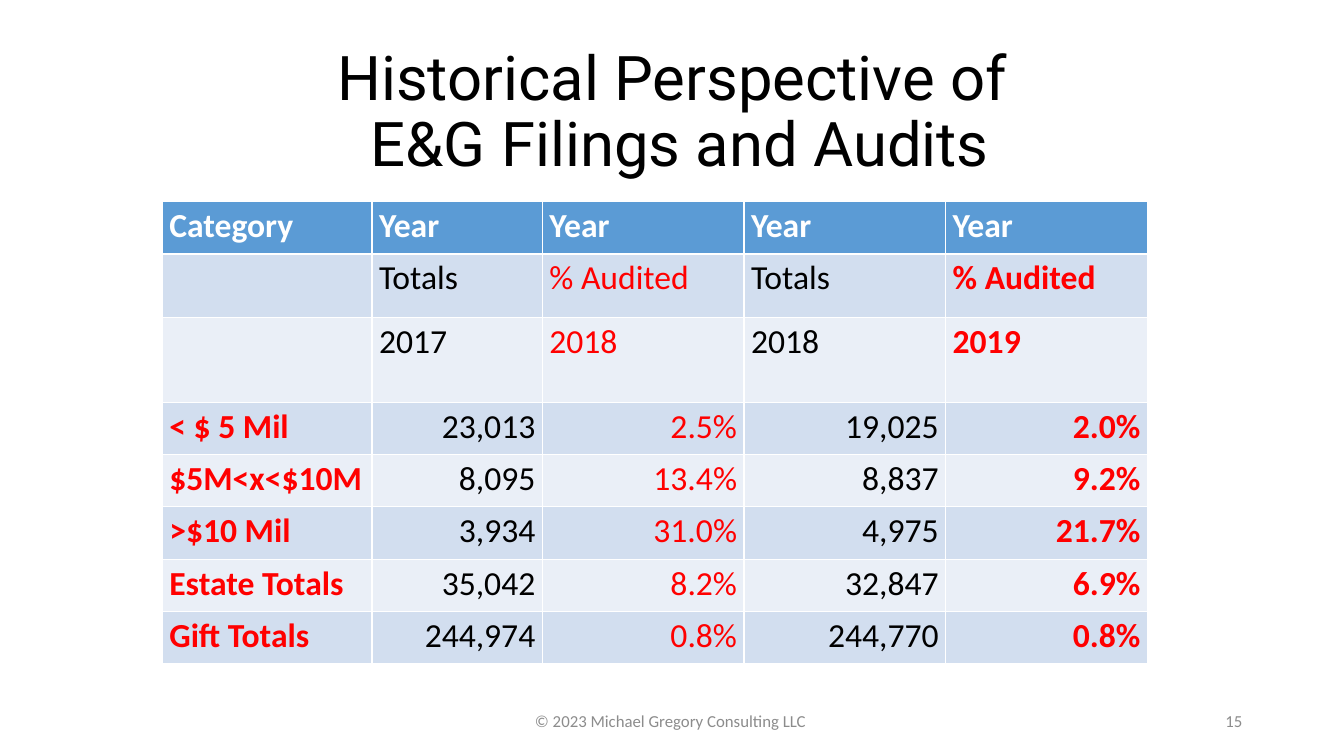
import pptx
import pptx.util
import pptx.dml.color
import pptx.enum.text

Inches = pptx.util.Inches
Align = pptx.enum.text.PP_ALIGN

BLACK, WHITE, RED, GRAY = "000000", "FFFFFF", "FF0000", "8C8C8C"
HEAD, BANDS = "5B9BD5", ("D2DEEF", "EAEFF7")

WIDTHS = [2.08, 1.69, 2, 2, 2]
HEIGHTS = [0.52, 0.63, 0.84] + [0.52] * 5
ROWS = [
    ["Category", "Year", "Year", "Year", "Year"],
    ["", "Totals", "% Audited", "Totals", "% Audited"],
    ["", "2017", "2018", "2018", "2019"],
    ["< $ 5 Mil", "23,013", "2.5%", "19,025", "2.0%"],
    ["$5M<x<$10M", "8,095", "13.4%", "8,837", "9.2%"],
    [">$10 Mil", "3,934", "31.0%", "4,975", "21.7%"],
    ["Estate Totals", "35,042", "8.2%", "32,847", "6.9%"],
    ["Gift Totals", "244,974", "0.8%", "244,770", "0.8%"],
]
LABELS = 3  # rows above the figures


def color(code):
    return pptx.dml.color.RGBColor.from_string(code)


def style(para, size, face, code, align, bold=False):
    para.alignment = align
    font = para.font
    font.size = pptx.util.Pt(size)
    font.name = face
    font.bold = bold
    font.color.rgb = color(code)


def add_text(slide, box, text, size, face, code, align):
    frame = slide.shapes.add_textbox(*map(Inches, box)).text_frame
    frame.word_wrap = True
    frame.vertical_anchor = pptx.enum.text.MSO_ANCHOR.MIDDLE
    para = frame.paragraphs[0]
    para.text = text
    style(para, size, face, code, align)
    return para


def add_title(slide, box):
    text = "Historical Perspective of\v E&G Filings and Audits"
    para = add_text(slide, box, text, 44, "Roboto", BLACK, Align.CENTER)
    para.line_spacing = 0.9


def fill_cell(cell, row, col, text):
    head = row == 0
    cell.fill.solid()
    cell.fill.fore_color.rgb = color(HEAD if head else BANDS[(row - 1) % 2])
    cell.margin_left = cell.margin_right = Inches(0.07)
    cell.margin_top = cell.margin_bottom = Inches(0.04)
    para = cell.text_frame.paragraphs[0]
    para.text = text
    # Totals are black, categories and audit rates red
    code = WHITE if head else BLACK if col in (1, 3) else RED
    align = Align.RIGHT if row >= LABELS and col > 0 else Align.LEFT
    style(para, 24, "Calibri", code, align, head or col in (0, 4))


def add_audits(slide, box):
    shape = slide.shapes.add_table(len(ROWS), len(WIDTHS), *map(Inches, box))
    table = shape.table
    for column, width in zip(table.columns, WIDTHS):
        column.width = Inches(width)
    for row, height in enumerate(HEIGHTS):
        table.rows[row].height = Inches(height)
        for col, text in enumerate(ROWS[row]):
            fill_cell(table.cell(row, col), row, col, text)


def add_footer(slide, box):
    left, top, width, height = box
    # Copyright in the middle, page number at the right end
    add_text(slide, (left + (width - 4.5) / 2, top, 4.5, height),
             "© 2023 Michael Gregory Consulting LLC ",
             12, "Calibri", GRAY, Align.CENTER)
    add_text(slide, (left + width - 3, top, 3, height),
             "15", 12, "Calibri", GRAY, Align.RIGHT)


def main():
    deck = pptx.Presentation()
    deck.slide_width, deck.slide_height = Inches(13.33), Inches(7.5)
    slide = deck.slides.add_slide(deck.slide_layouts[6])
    add_title(slide, (0.92, 0.4, 11.5, 1.45))
    add_audits(slide, (1.61, 2, sum(WIDTHS), sum(HEIGHTS)))
    add_footer(slide, (0.92, 6.95, 11.5, 0.4))
    deck.save("out.pptx")


if __name__ == "__main__":
    main()
